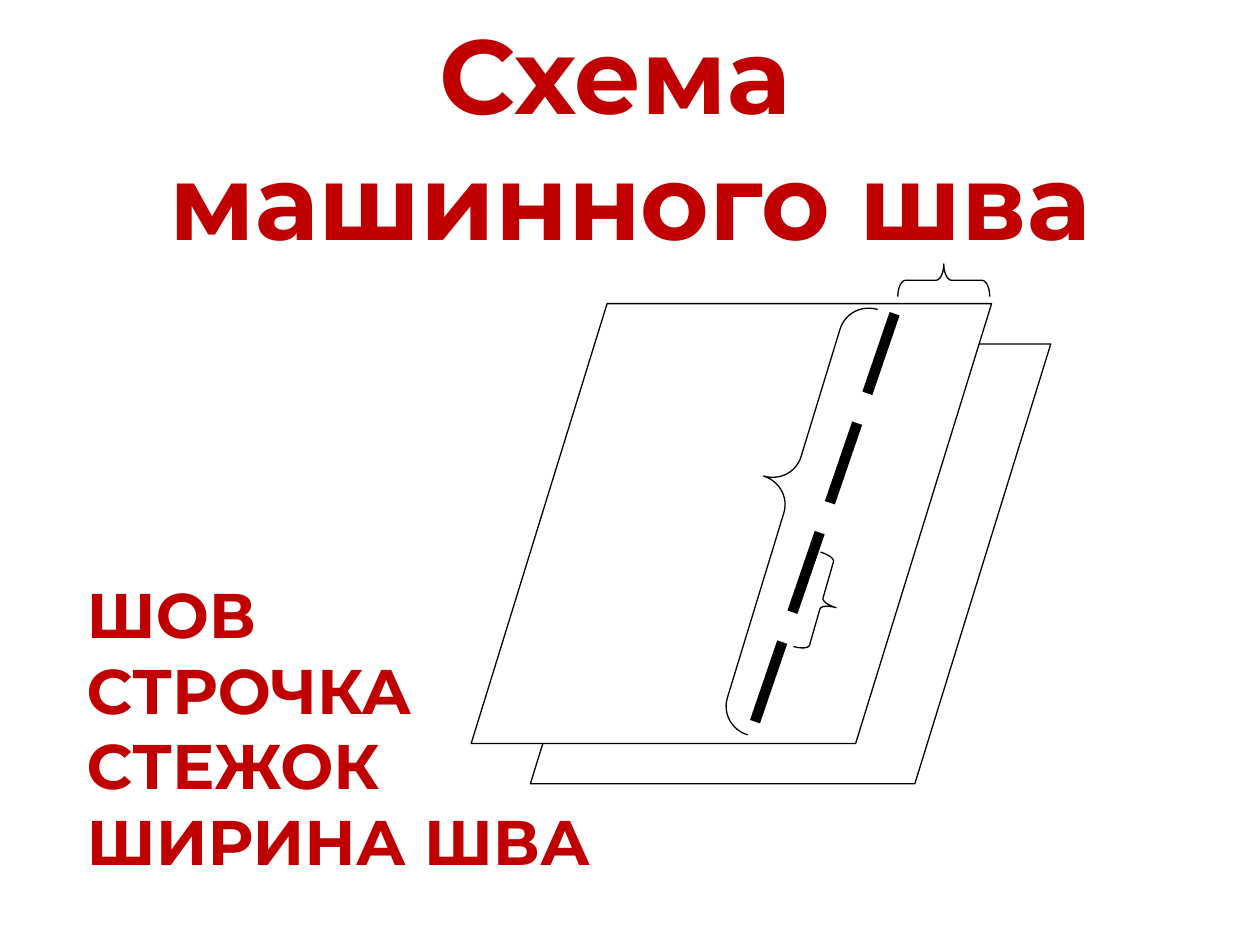
from pptx import Presentation
from pptx.dml.color import RGBColor
from pptx.enum.dml import MSO_LINE
from pptx.enum.shapes import MSO_CONNECTOR, MSO_SHAPE as Preset
from pptx.enum.text import MSO_ANCHOR, PP_ALIGN
from pptx.oxml.ns import qn
from pptx.util import Inches, Pt
from lxml.etree import SubElement

COLORS = {"text": "C00000", "ink": "000000", "cloth": "FFFFFF"}
FONT = "Montserrat"
TERMS = ["ШОВ", "СТРОЧКА", "СТЕЖОК", "ШИРИНА ШВА"]


def color(name):
    """Return the named colour."""
    return RGBColor.from_string(COLORS[name])


def add_text(slide, box, lines, size, align=PP_ALIGN.LEFT, anchor=MSO_ANCHOR.TOP):
    """Write bold lines, one paragraph each, in the box."""
    frame = slide.shapes.add_textbox(*map(Inches, box)).text_frame
    frame.word_wrap = True
    frame.vertical_anchor = anchor
    frame.text = "\n".join(lines)
    for paragraph in frame.paragraphs:
        paragraph.alignment = align
        font = paragraph.font
        font.name, font.size, font.bold = FONT, Pt(size), True
        font.color.rgb = color("text")


def add_outline(slide, preset, box, adjustments, rotation=0, fill=None):
    """Draw a thinly outlined preset shape in the box."""
    outline = slide.shapes.add_shape(preset, *map(Inches, box))
    outline.shadow.inherit = False
    outline.rotation = rotation
    for index, value in enumerate(adjustments):
        outline.adjustments[index] = value
    if fill:
        outline.fill.solid()
        outline.fill.fore_color.rgb = color(fill)
    else:
        outline.fill.background()
    outline.line.color.rgb = color("ink")
    outline.line.width = Pt(0.75)


def add_stitching(slide, start, end):
    """Draw the dashed row of stitches between two points."""
    stitching = slide.shapes.add_connector(
        MSO_CONNECTOR.STRAIGHT, *map(Inches, start + end))
    stitching.line.color.rgb = color("ink")
    stitching.line.width = Pt(6)
    stitching.line.dash_style = MSO_LINE.LONG_DASH
    SubElement(stitching._element.spPr, qn("a:effectLst"))


def add_seam_diagram(slide, left, top):
    """Draw two layers of cloth, the stitching and its braces."""
    for dx, dy in [(0.47, 0.87), (0, 0.55)]:
        add_outline(slide, Preset.PARALLELOGRAM,
                    (left + dx, top + dy, 4.13, 3.49), [0.309], fill="cloth")
    add_stitching(slide, (left + 3.36, top + 0.63), (left + 2.2, top + 4.02))
    braces = [
        (Preset.LEFT_BRACE, (3.62, 0, 0.26, 0.73), [0.238, 0.5], 90),
        (Preset.RIGHT_BRACE, (2.66, 2.54, 0.24, 0.78), [0.186, 0.5], 16),
        (Preset.LEFT_BRACE, (2.24, 0.45, 0.48, 3.53), [0.487, 0.433], 17),
    ]
    for preset, (dx, dy, width, height), adjustments, rotation in braces:
        add_outline(slide, preset, (left + dx, top + dy, width, height),
                    adjustments, rotation)


def main():
    """Build and save the slide."""
    deck = Presentation()
    deck.slide_width, deck.slide_height = Inches(10), Inches(7.5)
    slide = deck.slides.add_slide(deck.slide_layouts[6])
    add_text(slide, (0.5, 0.6, 9, 0.95), ["Схема \vмашинного шва"], 60,
             PP_ALIGN.CENTER, MSO_ANCHOR.MIDDLE)
    add_seam_diagram(slide, 3.74, 1.86)
    add_text(slide, (0.59, 4.52, 5.04, 2.52), TERMS, 36)
    deck.save("out.pptx")


if __name__ == "__main__":
    main()
